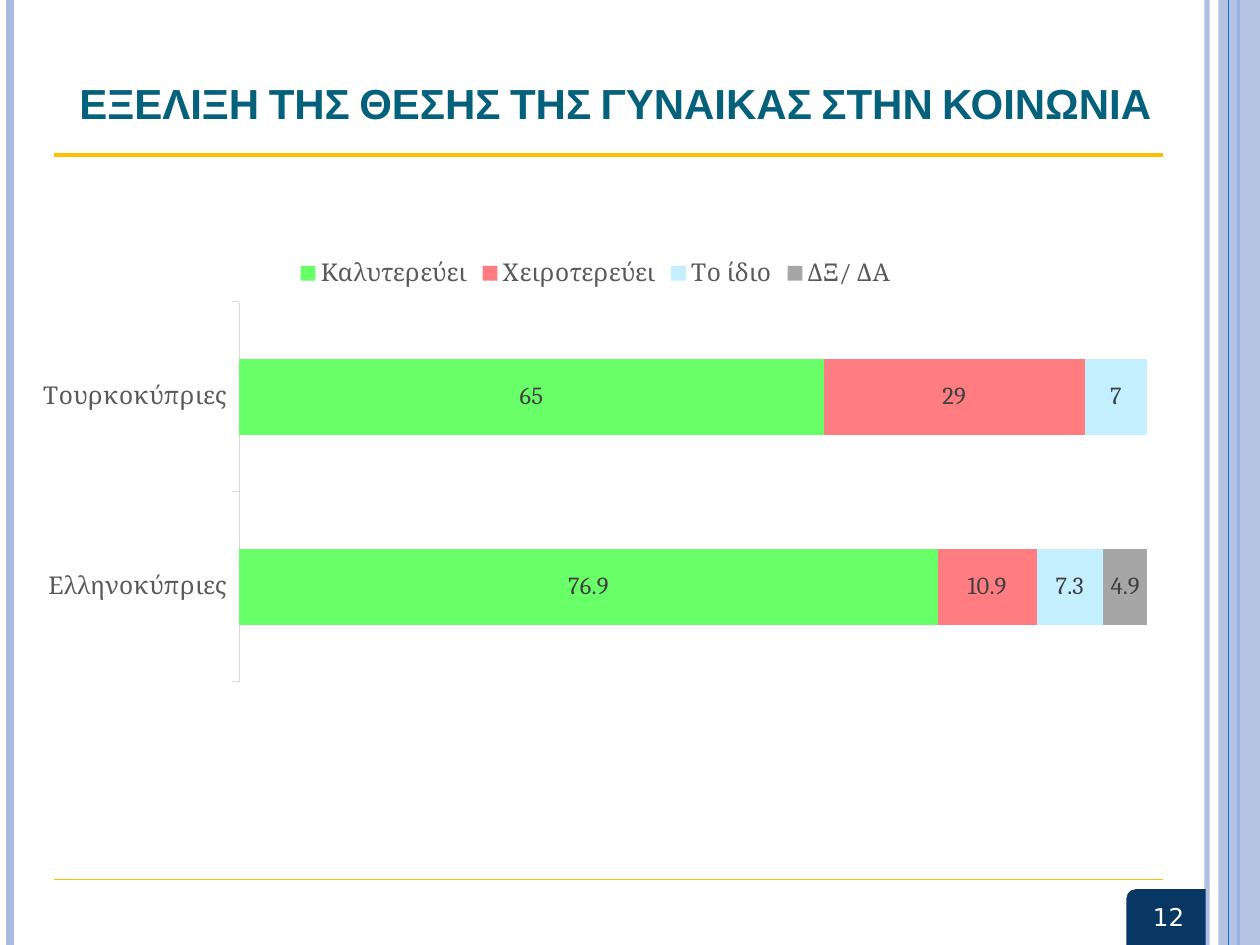
from dataclasses import dataclass

from lxml import etree
from pptx import Presentation, util as u
from pptx.chart import data as cd
from pptx.dml.color import RGBColor
from pptx.enum import chart as ch, shapes as sh, text as tx
from pptx.oxml import ns


@dataclass(frozen=True)
class Theme:
    pale: str = "ABBBDF"
    blue: str = "0F6FC6"
    navy: str = "083763"
    teal: str = "04617B"
    gold: str = "FFC000"
    white: str = "FFFFFF"
    label: str = "404040"
    grey: str = "595959"
    axis: str = "D9D9D9"
    head: str = "Arial"
    body: str = "Cambria"
    page: str = "DejaVu Sans"
    big: int = 24
    small: int = 14


@dataclass(frozen=True)
class Box:
    """Shares of the slide's width and height."""
    x: float
    y: float
    w: float
    h: float

    def emu(self) -> tuple:
        return tuple(int(share * side) for share, side in
                     zip((self.x, self.y, self.w, self.h), (WIDE, HIGH) * 2))


@dataclass(frozen=True)
class Rule:
    """A straight line between two points, in inches."""
    x1: float
    y1: float
    x2: float
    y2: float
    color: str
    width: float
    alpha: int = 100


@dataclass(frozen=True)
class Band:
    name: str
    vals: tuple
    color: str


T = Theme()
WIDE, HIGH = u.Inches(10), u.Inches(7.5)


def post(x: float, color: str, width: float, alpha: int = 100) -> Rule:
    return Rule(x, 0, x, 7.5, color, width, alpha)


def bar(y: float, width: float) -> Rule:
    return Rule(0.43, y, 9.23, y, T.gold, width)


UNDER = (post(9.58, T.pale, 3, 93), post(0.08, T.pale, 4.5), post(9.83, T.blue, 1.5))
OVER = (post(9.75, T.blue, 0.75),)
GOLD = (bar(1.23, 2.25), bar(6.98, 1))

CATS = ("Ελληνοκύπριες", "Τουρκοκύπριες")
BANDS = (
    Band("Καλυτερεύει", (76.9, 65), "69FF69"),
    Band("Χειροτερεύει", (10.9, 29), "FF7C80"),
    Band("Το ίδιο", (7.3, 7), "C4EFFF"),
    Band("ΔΞ/ ΔΑ", (4.9, None), "A6A6A6"),
)


def fade(part, alpha: int) -> None:
    """Make the last colour set in this XML part partly transparent."""
    color = list(part.iter(ns.qn("a:srgbClr")))[-1]
    etree.SubElement(color, ns.qn("a:alpha"), val=str(alpha * 1000))


def style(font, size: int, face: str, color: str) -> None:
    font.size, font.name = u.Pt(size), face
    font.color.rgb = RGBColor.from_string(color)


def draw_rule(slide, rule: Rule) -> None:
    ends = [u.Inches(n) for n in (rule.x1, rule.y1, rule.x2, rule.y2)]
    line = slide.shapes.add_connector(sh.MSO_CONNECTOR.STRAIGHT, *ends)
    line.line.color.rgb = RGBColor.from_string(rule.color)
    line.line.width = u.Pt(rule.width)
    props = line._element.spPr
    if rule.alpha < 100:
        fade(props, rule.alpha)
    etree.SubElement(props, ns.qn("a:effectLst"))


def draw_block(slide, kind, box: Box, color: str):
    block = slide.shapes.add_shape(kind, *box.emu())
    block.shadow.inherit = False
    block.fill.solid()
    block.fill.fore_color.rgb = RGBColor.from_string(color)
    block.line.fill.background()
    return block


def draw_frame(slide) -> None:
    for rule in UNDER:
        draw_rule(slide, rule)
    side = draw_block(slide, sh.MSO_SHAPE.RECTANGLE, Box(0.967, 0, 0.033, 1), T.pale)
    fade(side._element.spPr, 87)
    for rule in OVER:
        draw_rule(slide, rule)
    tab = draw_block(slide, sh.MSO_SHAPE.ROUND_1_RECTANGLE,
                     Box(0.894, 0.941, 0.063, 0.059), T.navy)
    tab._element.spPr.xfrm.set("flipH", "1")


def draw_title(slide, words: str) -> None:
    title = slide.shapes.title
    title.left, title.top, title.width, title.height = Box(
        0.053, 0.065, 0.907, 0.077).emu()
    frame = title.text_frame
    frame.word_wrap, frame.auto_size = True, tx.MSO_AUTO_SIZE.NONE
    frame.vertical_anchor = tx.MSO_ANCHOR.BOTTOM
    para = frame.paragraphs[0]
    para.alignment = tx.PP_ALIGN.LEFT
    run = para.add_run()
    run.text = words
    style(run.font, T.big, T.head, T.teal)
    run.font.bold = True
    run._r.get_or_add_rPr().set("cap", "small")


def draw_page(slide, number: str) -> None:
    frame = slide.shapes.add_textbox(*Box(0.894, 0.925, 0.067, 0.09).emu()).text_frame
    frame.word_wrap = True
    frame.vertical_anchor = tx.MSO_ANCHOR.MIDDLE
    para = frame.paragraphs[0]
    para.alignment = tx.PP_ALIGN.CENTER
    run = para.add_run()
    run.text = number
    style(run.font, T.small, T.page, T.white)


def draw_chart(slide) -> None:
    data = cd.CategoryChartData()
    data.categories = CATS
    for band in BANDS:
        data.add_series(band.name, band.vals)
    chart = slide.shapes.add_chart(ch.XL_CHART_TYPE.BAR_STACKED_100,
                                   *Box(0.016, 0.259, 0.913, 0.472).emu(), data).chart
    style(chart.font, T.small, T.body, T.grey)
    chart.has_title = False
    chart.has_legend = True
    chart.legend.position = ch.XL_LEGEND_POSITION.TOP
    chart.legend.include_in_layout = False
    style(chart.legend.font, T.small, T.body, T.grey)

    cats, vals = chart.category_axis, chart.value_axis
    cats.major_tick_mark = ch.XL_TICK_MARK.OUTSIDE
    cats.format.line.color.rgb = RGBColor.from_string(T.axis)
    cats.format.line.width = u.Pt(0.75)
    style(cats.tick_labels.font, T.small, T.body, T.grey)
    vals.visible = vals.has_major_gridlines = False
    vals.minimum_scale, vals.maximum_scale, vals.major_unit = 0, 1, 1

    plot = chart.plots[0]
    plot.gap_width, plot.overlap, plot.vary_by_categories = 150, 100, False
    for band, series in zip(BANDS, plot.series):
        series.format.fill.solid()
        series.format.fill.fore_color.rgb = RGBColor.from_string(band.color)
        labels = series.data_labels
        labels.show_value = True
        labels.position = ch.XL_LABEL_POSITION.CENTER
        style(labels.font, T.small, T.body, T.label)


def main() -> None:
    deck = Presentation()
    deck.slide_width, deck.slide_height = WIDE, HIGH
    slide = deck.slides.add_slide(deck.slide_layouts.get_by_name("Title Only"))
    draw_frame(slide)
    draw_title(slide, "ΕΞΕΛΙΞΗ ΤΗΣ ΘΕΣΗΣ ΤΗΣ ΓΥΝΑΙΚΑΣ ΣΤΗΝ ΚΟΙΝΩΝΙΑ")
    draw_page(slide, "12")
    for rule in GOLD:
        draw_rule(slide, rule)
    draw_chart(slide)
    deck.save("out.pptx")


if __name__ == "__main__":
    main()
